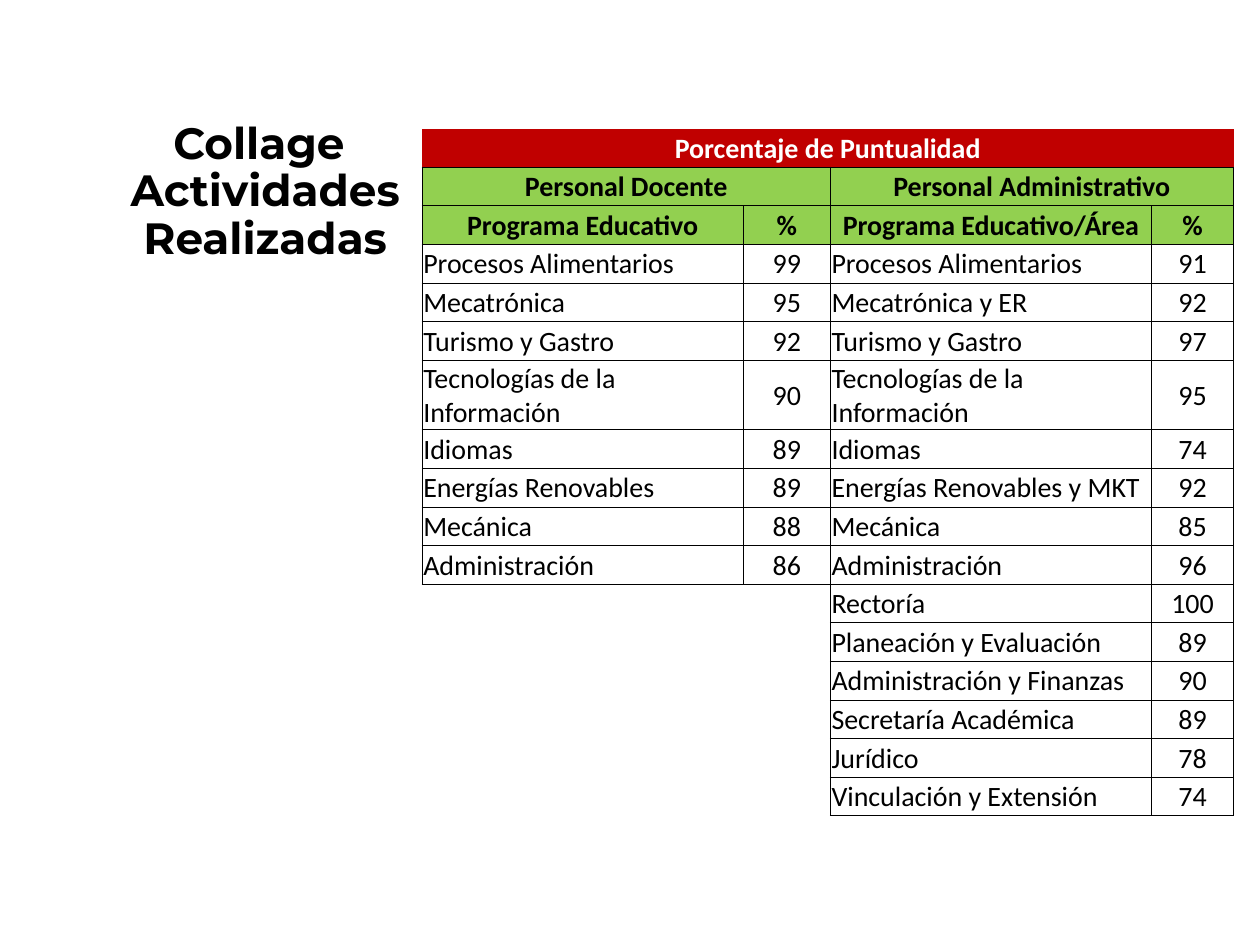
import dataclasses

import pptx
import pptx.dml.color
import pptx.enum.text
import pptx.oxml
import pptx.oxml.ns
import pptx.util

Align = pptx.enum.text.PP_ALIGN
Anchor = pptx.enum.text.MSO_ANCHOR


@dataclasses.dataclass(frozen=True)
class Theme:
    black: str = "000000"
    white: str = "FFFFFF"
    red: str = "C00000"
    green: str = "92D050"
    title_font: str = "Montserrat"
    table_font: str = "Calibri"
    title_size: int = 25
    table_size: int = 16
    border: float = 0.5


def write(para, text, *, font, size, color, bold=False, align=Align.LEFT, spacing=1.0):
    para.alignment = align
    para.line_spacing = spacing
    para.space_before = pptx.util.Pt(0)
    span = para.add_run() if text else para
    if text:
        span.text = text
    span.font.name = font
    span.font.size = pptx.util.Pt(size)
    span.font.bold = bold
    span.font.color.rgb = pptx.dml.color.RGBColor.from_string(color)


class Page:
    def __init__(self, deck, theme):
        self.theme = theme
        self.width, self.height = deck.slide_width, deck.slide_height
        self.slide = deck.slides.add_slide(deck.slide_layouts[5])

    def area(self, left, top, width, height):
        return (int(left * self.width), int(top * self.height),
                int(width * self.width), int(height * self.height))

    def title(self, lines, place, bottom_inset):
        box = self.slide.shapes.title
        box.left, box.top, box.width, box.height = self.area(*place)
        frame = box.text_frame
        frame.word_wrap = True
        frame.auto_size = pptx.enum.text.MSO_AUTO_SIZE.NONE
        frame.vertical_anchor = Anchor.MIDDLE
        frame.margin_bottom = int(bottom_inset * self.height)
        for index, line in enumerate(lines):
            para = frame.add_paragraph() if index else frame.paragraphs[0]
            write(para, line, font=self.theme.title_font, size=self.theme.title_size,
                  color=self.theme.black, bold=True, align=Align.CENTER, spacing=0.9)

    def table(self, rows, columns, place):
        table = self.slide.shapes.add_table(len(rows), len(columns), *self.area(*place)).table
        table.first_row = table.horz_banding = False
        for column, share in zip(table.columns, columns):
            column.width = int(share * self.width)
        return table

    def borders(self, cell, edges):
        properties = cell._tc.get_or_add_tcPr()
        for edge in "LRTB":
            paint = (f'<a:solidFill><a:srgbClr val="{self.theme.black}"/></a:solidFill>'
                     if edge in edges else "<a:noFill/>")
            properties.append(pptx.oxml.parse_xml(
                f'<a:ln{edge} {pptx.oxml.ns.nsdecls("a")} '
                f'w="{int(pptx.util.Pt(self.theme.border))}">{paint}</a:ln{edge}>'))

    def cell(self, cell, text, *, edges, fill=None, **style):
        self.borders(cell, edges)
        if fill:
            cell.fill.solid()
            cell.fill.fore_color.rgb = pptx.dml.color.RGBColor.from_string(fill)
        else:
            cell.fill.background()
        cell.vertical_anchor = Anchor.MIDDLE
        cell.margin_left = cell.margin_right = cell.margin_top = pptx.util.Inches(0.01)
        cell.margin_bottom = 0
        write(cell.text_frame.paragraphs[0], text, font=self.theme.table_font,
              size=self.theme.table_size, **style)


HEADERS = [
    ("Porcentaje de Puntualidad", "", "", ""),
    ("Personal Docente", "", "Personal Administrativo", ""),
    ("Programa Educativo", "%", "Programa Educativo/Área", "%"),
]
TEACHING = [
    ("Procesos Alimentarios", 99), ("Mecatrónica", 95), ("Turismo y Gastro", 92),
    ("Tecnologías de la Información", 90), ("Idiomas", 89),
    ("Energías Renovables", 89), ("Mecánica", 88), ("Administración", 86),
]
ADMINISTRATIVE = [
    ("Procesos Alimentarios", 91), ("Mecatrónica y ER", 92), ("Turismo y Gastro", 97),
    ("Tecnologías de la Información", 95), ("Idiomas", 74),
    ("Energías Renovables y MKT", 92), ("Mecánica", 85), ("Administración", 96),
    ("Rectoría", 100), ("Planeación y Evaluación", 89),
    ("Administración y Finanzas", 90), ("Secretaría Académica", 89),
    ("Jurídico", 78), ("Vinculación y Extensión", 74),
]


def add_punctuality(page):
    theme = page.theme
    padding = [("", "")] * (len(ADMINISTRATIVE) - len(TEACHING))
    rows = HEADERS + [left + right for left, right in zip(TEACHING + padding, ADMINISTRATIVE)]
    columns = [0.255, 0.069, 0.255, 0.065]
    table = page.table(rows, columns, (0.335, 1.02 / 7.5, sum(columns), 5.21 / 7.5))
    first_blank = len(HEADERS) + len(TEACHING)
    for row, values in enumerate(rows):
        header = row < len(HEADERS)
        for column, value in enumerate(values):
            edges = "B" if row == 0 else "LRTB"
            if row >= first_blank and column < 2:
                edges = ("T" if row == first_blank else "") + ("R" if column == 1 else "")
            page.cell(
                table.cell(row, column), str(value), edges=edges,
                fill=(theme.red if row == 0 else theme.green) if header else None,
                color=theme.white if row == 0 else theme.black, bold=header,
                align=Align.CENTER if header or column % 2 else Align.LEFT)
    for row, first, last in [(0, 0, 3), (1, 0, 1), (1, 2, 3)]:
        table.cell(row, first).merge(table.cell(row, last))


def main():
    deck = pptx.Presentation()
    deck.slide_width, deck.slide_height = pptx.util.Inches(10), pptx.util.Inches(7.5)
    page = Page(deck, Theme())
    page.title(["Collage ", "Actividades", "Realizadas"],
               (-0.112, 0.16 / 7.5, 0.645, 3.24 / 7.5), 0.55 / 7.5)
    add_punctuality(page)
    deck.save("out.pptx")


if __name__ == "__main__":
    main()
